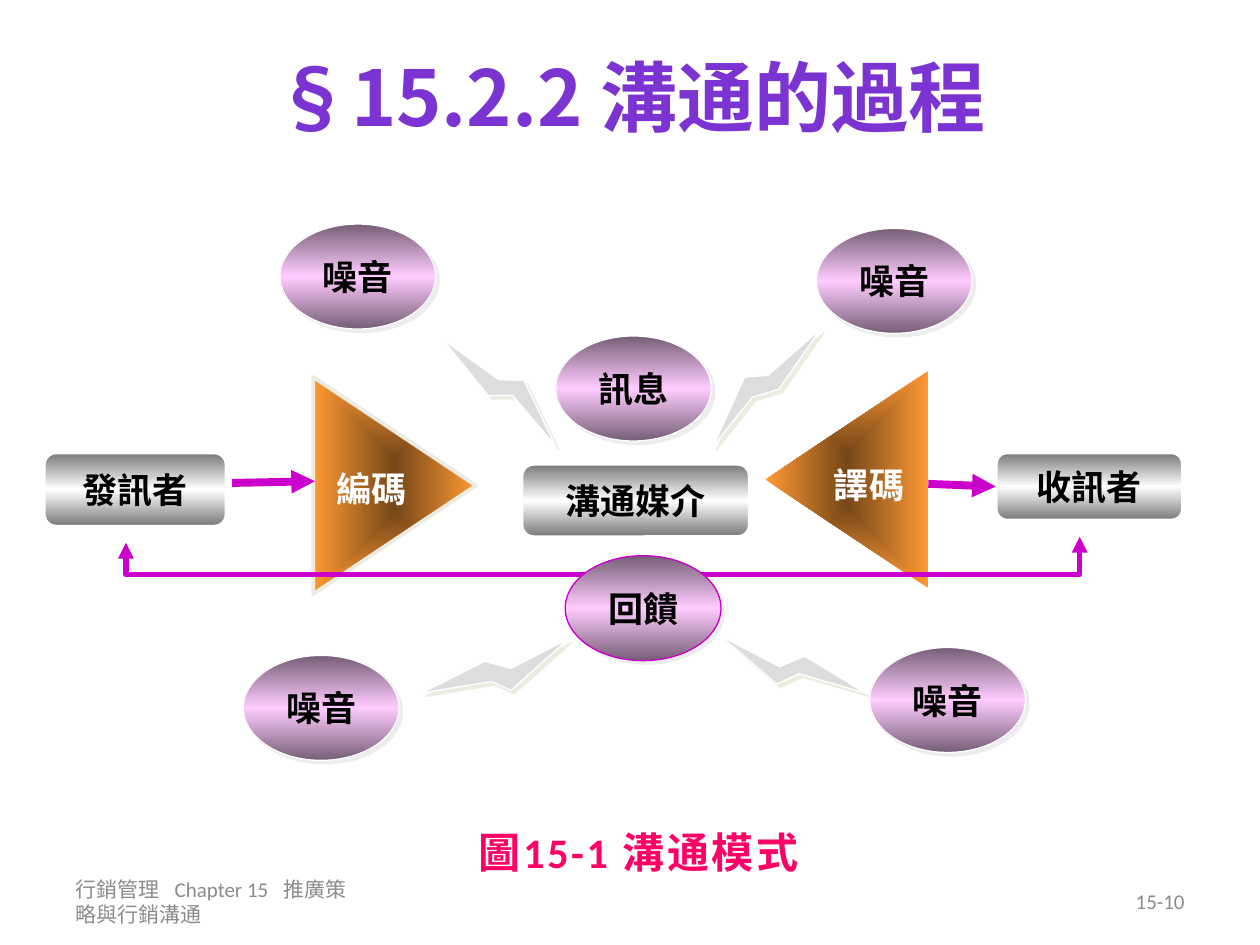
from dataclasses import dataclass

from lxml.etree import SubElement
from pptx import Presentation
from pptx.dml.color import RGBColor as RGB
from pptx.enum.shapes import MSO_CONNECTOR as LINK, MSO_SHAPE as SHAPE
from pptx.enum.text import MSO_ANCHOR as ANCHOR, PP_ALIGN as ALIGN
from pptx.oxml.ns import qn
from pptx.util import Pt


@dataclass(frozen=True)
class Theme:
    cjk: str = "Noto Sans CJK SC"
    latin: str = "Calibri"
    title: str = "7B34D2"
    caption: str = "FF0066"
    footer: str = "8C8C8C"
    black: str = "000000"
    white: str = "FFFFFF"
    cream: str = "EEECE1"
    bolt: str = "DDDDDD"
    link: str = "CC00CC"
    steel: tuple = ("767676", "FFFFFF", "767676")
    pink: tuple = ("765E76", "FFCCFF", "765E76")
    orange: tuple = ("764718", "FF9933")
    title_size: int = 44
    caption_size: int = 24
    label_size: int = 20
    footer_size: int = 12


theme = Theme()


def write(frame, text, size, color, font=theme.cjk, bold=True,
          align=ALIGN.CENTER, anchor=ANCHOR.MIDDLE, wrap=False, spacing=0):
    """Add one formatted run to the first paragraph of a text frame."""
    frame.word_wrap = wrap
    frame.vertical_anchor = anchor
    para = frame.paragraphs[0]
    para.alignment = align
    span = para.add_run()
    span.text = text
    span.font.size = Pt(size)
    span.font.bold = bold
    span.font.name = font
    span.font.color.rgb = RGB.from_string(color)
    props = span.font._element
    SubElement(props, qn("a:ea"), typeface=theme.cjk)
    if spacing:
        props.set("spc", str(spacing))


def add_block(kind, bounds, colors, outline, width, radial=False):
    """Add a preset shape with evenly spaced gradient stops."""
    shape = page.shapes.add_shape(kind, *map(Pt, bounds))
    shape.shadow.inherit = False
    shape.fill.gradient()
    gradient = shape._element.spPr.find(qn("a:gradFill"))
    for child in list(gradient):
        gradient.remove(child)
    stops = SubElement(gradient, qn("a:gsLst"))
    for index, color in enumerate(colors):
        position = index * 100000 // (len(colors) - 1)
        stop = SubElement(stops, qn("a:gs"), pos=str(position))
        SubElement(stop, qn("a:srgbClr"), val=color)
    if radial:
        focus = SubElement(gradient, qn("a:path"), path="shape")
        SubElement(focus, qn("a:fillToRect"), l="50000", t="50000", r="50000", b="50000")
    else:
        SubElement(gradient, qn("a:lin"), ang="5400000", scaled="1")
    if outline:
        shape.line.color.rgb = RGB.from_string(outline)
        shape.line.width = Pt(width)
    else:
        shape.line.fill.background()
    return shape


deck = Presentation()
deck.slide_width, deck.slide_height = Pt(720), Pt(540)
page = deck.slides.add_slide(deck.slide_layouts[5])

# Title
title = page.shapes.title
title.left, title.top, title.width, title.height = Pt(36), Pt(9.5), Pt(648), Pt(90.5)
write(title.text_frame, "§15.2.2 溝通的過程", theme.title_size, theme.title, wrap=True)

# Encoding and decoding triangles
for left, top, turn, outline in ((163.5, 231, 90, theme.cream), (422, 227.5, 270, None)):
    triangle = add_block(SHAPE.ISOSCELES_TRIANGLE, (left, top, 124, 93),
                         theme.orange, outline, 2.25, radial=True)
    triangle.rotation = turn

# Sender, medium and receiver
stations = {}
for name, bounds in (("發訊者", (25, 258.5, 104.5, 42.5)),
                     ("溝通媒介", (298, 265, 130.5, 42)),
                     ("收訊者", (569, 258.5, 107, 39))):
    stations[name] = add_block(SHAPE.ROUNDED_RECTANGLE, bounds, theme.steel, theme.white, 2.25)
    write(stations[name].text_frame, name, theme.label_size, theme.black)

# Arrows: sender to encoding, decoding to receiver, and the feedback loop
send = page.shapes.add_connector(LINK.STRAIGHT, Pt(132.5), Pt(276), Pt(180), Pt(275))
receive = page.shapes.add_connector(LINK.STRAIGHT, Pt(530.5), Pt(276.5), Pt(569), Pt(278))
receive.end_connect(stations["收訊者"], 1)
loop = page.shapes.add_connector(LINK.ELBOW, Pt(342.8), Pt(36), Pt(346.2), Pt(581))
frame = loop._element.spPr.find(qn("a:xfrm"))
for key, value in (("rot", "5400000"), ("flipH", "1"), ("flipV", "1")):
    frame.set(key, value)
guides = loop._element.spPr.find(qn("a:prstGeom")).find(qn("a:avLst"))
SubElement(guides, qn("a:gd"), name="adj1", fmla="val -533300")
for arrow, width, ends in ((send, 4.5, ["tailEnd"]), (receive, 4.5, ["tailEnd"]),
                           (loop, 3, ["headEnd", "tailEnd"])):
    arrow.line.color.rgb = RGB.from_string(theme.link)
    arrow.line.width = Pt(width)
    for end in ends:
        SubElement(arrow.line._get_or_add_ln(), qn(f"a:{end}"), type="triangle")
    SubElement(arrow._element.spPr, qn("a:effectLst"))

# Message, feedback and noise ovals
shadowed = []
for name, left, top, outline in (("訊息", 317.5, 192, theme.white),
                                 ("回饋", 323, 317.5, theme.link),
                                 ("噪音", 160, 128, theme.white),
                                 ("噪音", 466.5, 130.5, theme.white),
                                 ("噪音", 139, 374.5, theme.white),
                                 ("噪音", 497, 370, theme.white)):
    oval = add_block(SHAPE.OVAL, (left, top, 89, 60), theme.pink, outline, 0.75)
    write(oval.text_frame, name, theme.label_size, theme.black)
    shadowed.append((oval, theme.bolt, 50000))

# Lightning bolts from the noise
bolts = (
    ((253, 194), (279, 226), (293, 226), (317.5, 255), (299.5, 217.5), (285, 217)),
    ((469, 188), (439, 214.5), (425.5, 215.5), (407.5, 255), (430, 227), (445, 222.5)),
    ((241, 396), (277, 378), (292, 382), (325, 365), (292, 394.5), (281, 389.5)),
    ((412, 363.5), (444, 391), (456.5, 385), (494.5, 396), (460, 375), (445.5, 381)),
)
for start, *corners in bolts:
    builder = page.shapes.build_freeform(*map(Pt, start))
    builder.add_line_segments([(Pt(x), Pt(y)) for x, y in corners], close=True)
    bolt = builder.convert_to_shape()
    bolt.fill.solid()
    bolt.fill.fore_color.rgb = RGB.from_string(theme.bolt)
    bolt.line.color.rgb = RGB.from_string(theme.white)
    bolt.line.width = Pt(0.75)
    bolt.shadow.inherit = False
    shadowed.append((bolt, theme.cream, 100000))

# Offset shadows
for shape, color, opacity in shadowed:
    effects = shape._element.spPr.find(qn("a:effectLst"))
    shadow = SubElement(effects, qn("a:outerShdw"), dist=str(Pt(2.8)), dir="2700000",
                        algn="ctr", rotWithShape="0")
    tint = SubElement(shadow, qn("a:srgbClr"), val=color)
    SubElement(tint, qn("a:alpha"), val=str(opacity))

# Triangle labels
for name, left, top in (("編碼", 185.5, 263.5), ("譯碼", 469.5, 261.5)):
    box = page.shapes.add_textbox(Pt(left), Pt(top), Pt(55), Pt(31))
    write(box.text_frame, name, theme.label_size, theme.white,
          align=ALIGN.LEFT, anchor=ANCHOR.TOP)

# Caption
box = page.shapes.add_textbox(Pt(266.5), Pt(468.5), Pt(210), Pt(36))
write(box.text_frame, "圖15-1 溝通模式", theme.caption_size, theme.caption, theme.latin,
      align=ALIGN.LEFT, anchor=ANCHOR.TOP, wrap=True, spacing=150)

# Footer and page number
box = page.shapes.add_textbox(Pt(36), Pt(500.5), Pt(176.5), Pt(29))
for text, spacing in (("行銷管理", 0), (" ", 600), ("Chapter 15", 0), (" ", 600),
                      ("推廣策略與行銷溝通", 0)):
    write(box.text_frame, text, theme.footer_size, theme.footer, theme.latin, bold=False,
          align=ALIGN.LEFT, wrap=True, spacing=spacing)
box = page.shapes.add_textbox(Pt(516), Pt(500.5), Pt(168), Pt(29))
write(box.text_frame, "15-10", theme.footer_size, theme.footer, theme.latin, bold=False,
      align=ALIGN.RIGHT, wrap=True)

deck.save("out.pptx")
